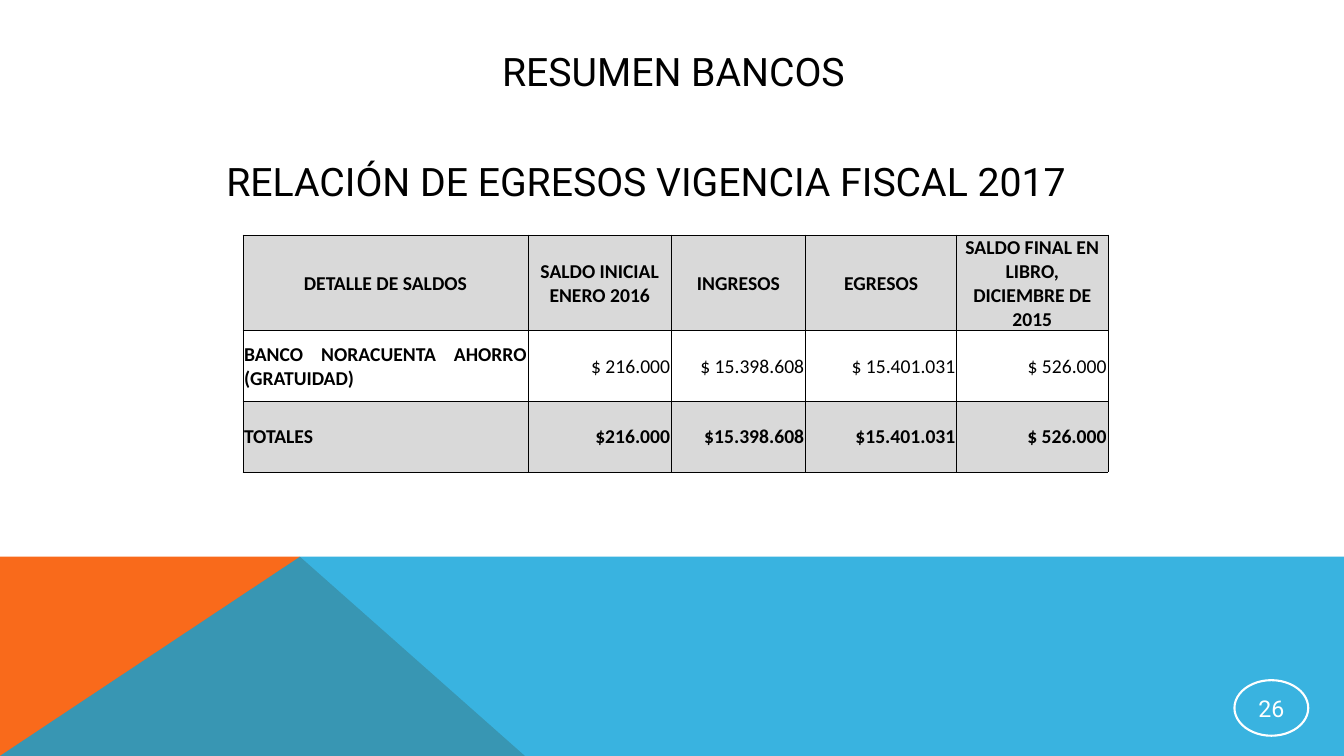
from lxml import etree
from pptx import Presentation
from pptx.dml.color import RGBColor
from pptx.enum import shapes, text
from pptx.oxml import ns
from pptx.util import Cm, Pt

WHITE = RGBColor(0xFF, 0xFF, 0xFF)
BLACK = RGBColor(0, 0, 0)
GREY = RGBColor(0xD9, 0xD9, 0xD9)
ORANGE = RGBColor(0xF9, 0x6A, 0x1B)
BLUE = RGBColor(0x08, 0xA1, 0xD9)

WIDE, HIGH = 33.87, 19.05
LEFT, MID, RIGHT = text.PP_ALIGN.LEFT, text.PP_ALIGN.CENTER, text.PP_ALIGN.RIGHT
JUST = text.PP_ALIGN.JUSTIFY

WIDTHS = [7.19, 3.61, 3.38, 3.81, 3.81]
HEIGHTS = [2.41, 1.78, 1.78]
ROWS = [
    ["DETALLE DE SALDOS", "SALDO INICIAL ENERO 2016", "INGRESOS", "EGRESOS",
     "SALDO FINAL EN LIBRO, DICIEMBRE DE 2015"],
    ["BANCO NORACUENTA AHORRO (GRATUIDAD)", "$ 216.000", "$ 15.398.608",
     "$ 15.401.031", "$ 526.000"],
    ["TOTALES", "$216.000", "$15.398.608", "$15.401.031", "$ 526.000"],
]


def write(frame, words, size=28, font="Roboto", color=BLACK, bold=False, align=MID):
    frame.word_wrap = True
    para = frame.paragraphs[0]
    para.alignment = align
    run = para.add_run()
    run.text = words
    run.font.size = Pt(size)
    run.font.name = font
    run.font.bold = bold
    run.font.color.rgb = color


def title(slide, words, left, top, width, height):
    box = slide.shapes.add_textbox(Cm(left), Cm(top), Cm(width), Cm(height))
    box.text_frame.vertical_anchor = text.MSO_ANCHOR.MIDDLE
    write(box.text_frame, words)


def area(slide, points, color, alpha=100):
    """Draw a filled polygon, with alpha as percent opacity."""
    dots = [(Cm(x), Cm(y)) for x, y in points]
    build = slide.shapes.build_freeform(*dots[0])
    build.add_line_segments(dots[1:], close=True)
    shape = build.convert_to_shape()
    shape.shadow.inherit = False
    shape.line.fill.background()
    shape.fill.solid()
    shape.fill.fore_color.rgb = color
    if alpha < 100:
        tint = shape.fill._xPr.find(".//" + ns.qn("a:srgbClr"))
        etree.SubElement(tint, ns.qn("a:alpha"), val=str(alpha * 1000))


def band(slide, left, top, width, height):
    right, base = left + width, top + height
    peak = left + 7.56
    area(slide, [(left, base), (left, top), (peak, top), (left + 13.23, base)], ORANGE)
    area(slide, [(left, base), (peak, top), (right, top), (right, base)], BLUE, alpha=80)


def border(cell):
    props = cell._tc.get_or_add_tcPr()
    for side in ("lnL", "lnR", "lnT", "lnB"):
        line = etree.SubElement(props, ns.qn("a:" + side), w=str(Pt(0.5)))
        fill = etree.SubElement(line, ns.qn("a:solidFill"))
        etree.SubElement(fill, ns.qn("a:srgbClr"), val=str(BLACK))


def style(row, col):
    """Return the alignment and weight of a table cell."""
    if row == 0:
        return MID, True
    if col == 0:
        return (JUST if row == 1 else LEFT), True
    return RIGHT, row == 2


def balance(slide, left, top):
    frame = slide.shapes.add_table(len(ROWS), len(WIDTHS), Cm(left), Cm(top),
                                   Cm(sum(WIDTHS)), Cm(sum(HEIGHTS)))
    table = frame.table
    table.horz_banding = False
    for col, width in zip(table.columns, WIDTHS):
        col.width = Cm(width)
    for r, (row, height) in enumerate(zip(ROWS, HEIGHTS)):
        table.rows[r].height = Cm(height)
        for c, words in enumerate(row):
            cell = table.cell(r, c)
            cell.margin_left = cell.margin_right = cell.margin_top = Cm(0.03)
            cell.margin_bottom = 0
            cell.vertical_anchor = text.MSO_ANCHOR.MIDDLE
            border(cell)
            cell.fill.solid()
            cell.fill.fore_color.rgb = WHITE if r == 1 else GREY
            align, bold = style(r, c)
            write(cell.text_frame, words, size=14, font="Calibri", bold=bold, align=align)


def badge(slide, words, left, top, width, height):
    oval = slide.shapes.add_shape(shapes.MSO_SHAPE.OVAL, Cm(left), Cm(top),
                                  Cm(width), Cm(height))
    oval.shadow.inherit = False
    oval.fill.background()
    oval.line.color.rgb = WHITE
    oval.line.width = Pt(1.5)
    frame = oval.text_frame
    frame.margin_left = frame.margin_right = Cm(0.03)
    frame.margin_top = frame.margin_bottom = Cm(0.03)
    frame.vertical_anchor = text.MSO_ANCHOR.MIDDLE
    write(frame, words, size=16.5, color=WHITE)


def main():
    deck = Presentation()
    deck.slide_width, deck.slide_height = Cm(WIDE), Cm(HIGH)
    slide = deck.slides.add_slide(deck.slide_layouts[6])
    band(slide, 0, 14.03, WIDE, HIGH - 14.03)
    title(slide, "RESUMEN BANCOS", 3.05, 1.02, 27.84, 1.52)
    balance(slide, 6.12, 5.92)
    badge(slide, "26", 31.11, 17.14, 1.86, 1.4)
    title(slide, "RELACIÓN DE EGRESOS VIGENCIA FISCAL 2017", 2.36, 3.81, 27.84, 1.52)
    deck.save("out.pptx")


if __name__ == "__main__":
    main()
